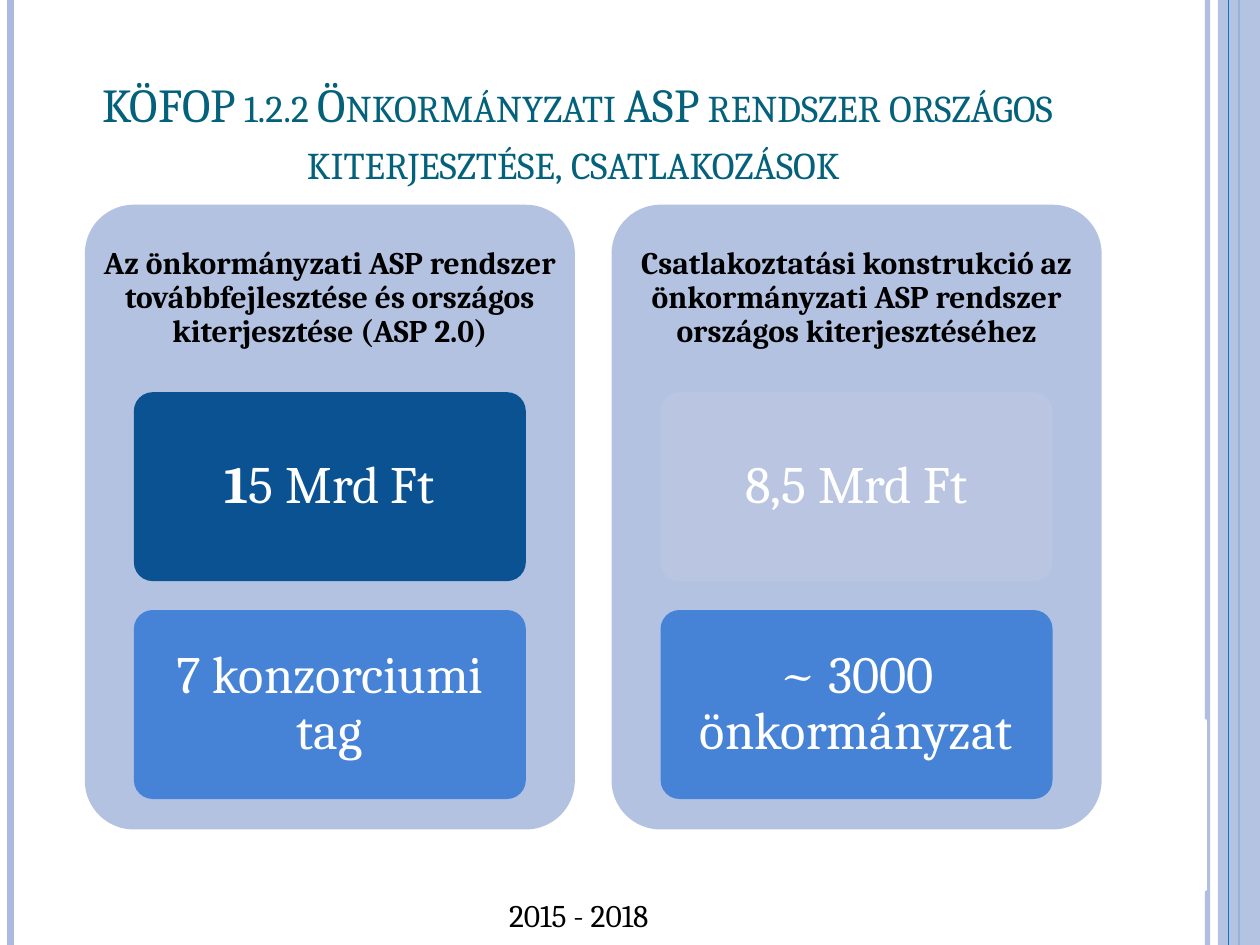
from lxml import etree
from pptx import Presentation
from pptx.dml.color import RGBColor
from pptx.enum.shapes import MSO_CONNECTOR, MSO_SHAPE
from pptx.enum.text import MSO_ANCHOR, PP_ALIGN
from pptx.oxml.ns import qn
from pptx.util import Pt

RECT, ROUND = MSO_SHAPE.RECTANGLE, MSO_SHAPE.ROUNDED_RECTANGLE
LINE = MSO_CONNECTOR.STRAIGHT
CENTER = PP_ALIGN.CENTER
MIDDLE, BOTTOM, TOP = MSO_ANCHOR.MIDDLE, MSO_ANCHOR.BOTTOM, MSO_ANCHOR.TOP
WHITE = RGBColor(0xFF, 0xFF, 0xFF)
BLACK = RGBColor(0, 0, 0)
TEAL = RGBColor(0x04, 0x61, 0x7B)
PALE = RGBColor(0xAB, 0xBB, 0xDF)
BLUE = RGBColor(0x0F, 0x6F, 0xC6)
PANEL = RGBColor(0xB4, 0xC2, 0xE2)
NAVY = RGBColor(0x0B, 0x52, 0x92)
MIST = RGBColor(0xB9, 0xC5, 0xE1)
SKY = RGBColor(0x46, 0x82, 0xD6)
FONT = "Cambria"
WIDE, HIGH = 720, 540

CARDS = [
    ("Az önkormányzati ASP rendszer továbbfejlesztése és országos "
     "kiterjesztése (ASP 2.0)",
     [(("1", "5 Mrd Ft"), NAVY), (("", "7 konzorciumi tag"), SKY)]),
    ("Csatlakoztatási konstrukció az önkormányzati ASP rendszer országos "
     "kiterjesztéséhez",
     [(("", "8,5 Mrd Ft"), MIST), (("", "~ 3000 önkormányzat"), SKY)]),
]


def fade(fill, percent):
    for color in fill.iter(qn("a:srgbClr")):
        etree.SubElement(color, qn("a:alpha"), val=str(percent * 1000))


def add_box(slide, kind, box, color):
    shape = slide.shapes.add_shape(kind, *map(Pt, box))
    shape.shadow.inherit = False
    shape.fill.solid()
    shape.fill.fore_color.rgb = color
    shape.line.fill.background()
    if kind == ROUND:
        shape.adjustments[0] = 0.1
    return shape


def add_rule(slide, x, color, width, alpha=100):
    rule = slide.shapes.add_connector(LINE, Pt(x), 0, Pt(x), Pt(HIGH))
    rule.line.color.rgb = color
    rule.line.width = Pt(width)
    props = rule._element.spPr
    etree.SubElement(props, qn("a:effectLst"))
    if alpha < 100:
        fade(props, alpha)


def write(shape, parts, size, color, anchor=MIDDLE, pad=(7.2, 3.6),
          bold=False, wrap=True):
    frame = shape.text_frame
    frame.word_wrap = wrap
    frame.vertical_anchor = anchor
    frame.margin_left = frame.margin_right = Pt(pad[0])
    frame.margin_top = frame.margin_bottom = Pt(pad[1])
    para = frame.paragraphs[0]
    para.alignment = CENTER
    para.font.name, para.font.size = FONT, Pt(size)
    para.font.color.rgb, para.font.bold = color, bold
    for part in parts:
        para.add_run().text = part
    return para


def add_frame(slide):
    add_rule(slide, 690, PALE, 3, 93)
    add_rule(slide, 6, PALE, 4.5)
    add_rule(slide, 708, BLUE, 1.5)
    band = add_box(slide, RECT, (696, 0, 24, HIGH), PALE)
    fade(band._element.spPr, 87)
    add_rule(slide, 702, BLUE, 0.75)
    patch = add_box(slide, RECT, (615, 412, 73.5, 96.5), WHITE)
    patch.line.color.rgb = WHITE
    patch.line.width = Pt(2)


def add_title(slide, box, text):
    title = slide.shapes.title
    title.left, title.top, title.width, title.height = map(Pt, box)
    para = write(title, [text], 27, TEAL, BOTTOM)
    for run in para.runs:
        run.font._element.set("cap", "small")


def add_card(slide, box, head, tiles):
    x, y, w, h = box
    add_box(slide, ROUND, box, PANEL)
    label = slide.shapes.add_textbox(*map(Pt, (x, y, w, 0.3 * h)))
    para = write(label, [head], 18, BLACK, pad=(5, 5), bold=True)
    para.line_spacing = 0.9
    for i, ((lead, rest), color) in enumerate(tiles):
        spot = (x + 0.1 * w, y + 0.3 * h + i * 124.5, 0.8 * w, 108)
        tile = add_box(slide, ROUND, spot, color)
        para = write(tile, [part for part in (lead, rest) if part],
                     30, WHITE, pad=(6, 4.5))
        para.line_spacing = 0.9
        if lead:
            para.runs[0].font.bold = True


def add_years(slide, box, text):
    note = slide.shapes.add_textbox(*map(Pt, box))
    write(note, [text], 18, BLACK, TOP, wrap=False)


def main():
    deck = Presentation()
    deck.slide_width, deck.slide_height = Pt(WIDE), Pt(HIGH)
    slide = deck.slides.add_slide(deck.slide_layouts[5])
    add_frame(slide)
    add_title(slide, (36, 21.5, 588, 90),
              "KÖFOP 1.2.2 Önkormányzati ASP rendszer országos "
              "kiterjesztése, csatlakozások ")
    for i, (head, tiles) in enumerate(CARDS):
        add_card(slide, (48.5 + 301 * i, 117, 280, 357), head, tiles)
    add_years(slide, (275, 508.5, 111.5, 29), "2015 - 2018")
    deck.save("out.pptx")


if __name__ == "__main__":
    main()
